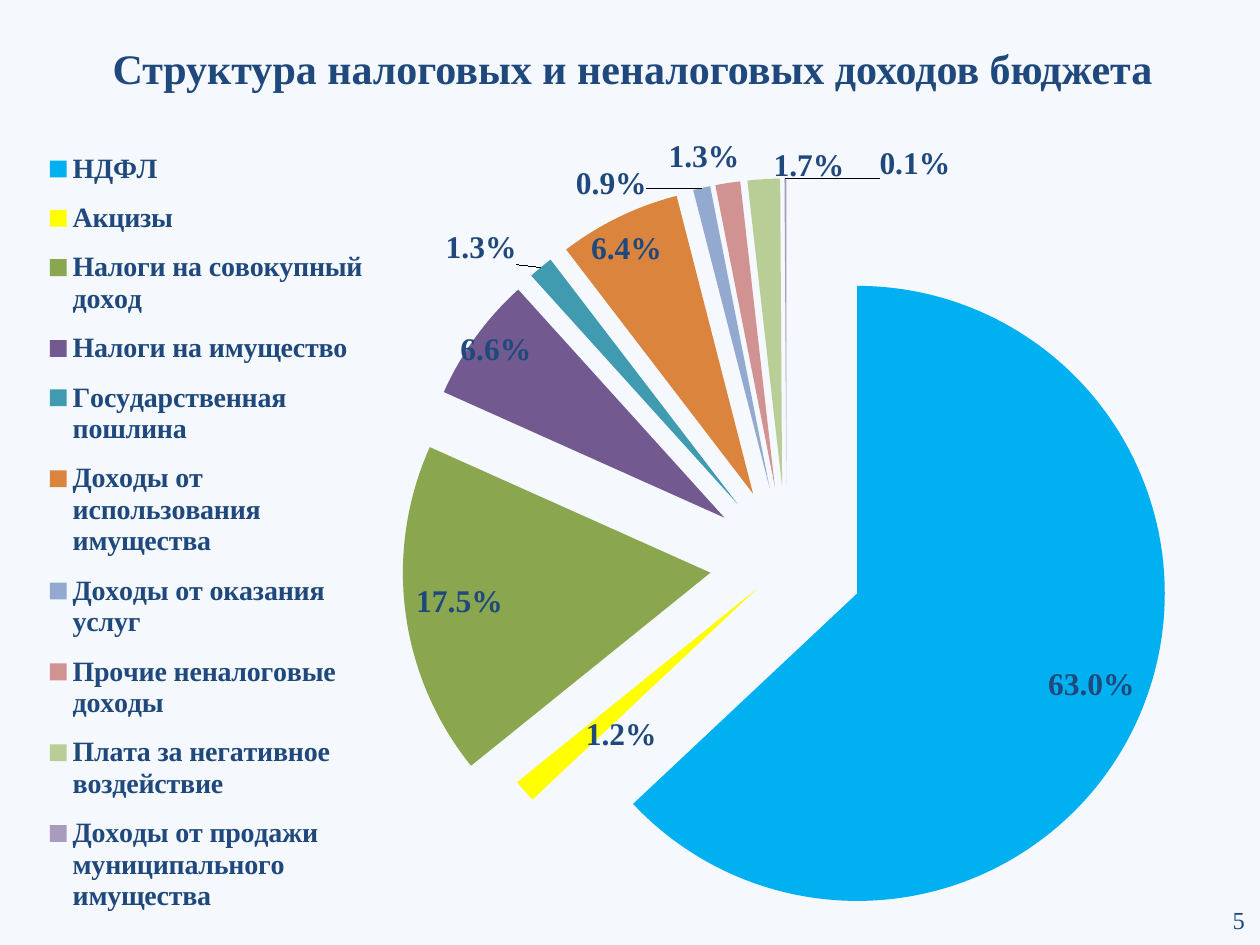
"""Build a slide with an exploded pie chart of budget revenue."""
from math import cos, pi, sin
from typing import NamedTuple, Optional

from lxml import etree
from pptx import Presentation
from pptx.chart.data import CategoryChartData
from pptx.dml.color import RGBColor
from pptx.enum.chart import XL_CHART_TYPE, XL_LABEL_POSITION, XL_LEGEND_POSITION
from pptx.enum.text import MSO_ANCHOR, MSO_AUTO_SIZE, PP_ALIGN
from pptx.oxml.ns import qn
from pptx.util import Inches, Pt

PIE = XL_CHART_TYPE.PIE
BEST_FIT, LABEL_CENTER = XL_LABEL_POSITION.BEST_FIT, XL_LABEL_POSITION.CENTER
LEGEND_RIGHT = XL_LEGEND_POSITION.RIGHT
MIDDLE, NO_FIT = MSO_ANCHOR.MIDDLE, MSO_AUTO_SIZE.NONE
CENTER, RIGHT = PP_ALIGN.CENTER, PP_ALIGN.RIGHT

NAVY = RGBColor(0x1F, 0x49, 0x7D)
PALE = RGBColor(0xF5, 0xF8, 0xFC)
SKY = RGBColor(0x00, 0xB0, 0xF0)
YELLOW = RGBColor(0xFF, 0xFF, 0x00)
GREEN = RGBColor(0x8A, 0xA6, 0x4F)
PURPLE = RGBColor(0x72, 0x5A, 0x91)
TEAL = RGBColor(0x41, 0x9B, 0xB0)
ORANGE = RGBColor(0xDB, 0x84, 0x3D)
STEEL = RGBColor(0x93, 0xA9, 0xCF)
ROSE = RGBColor(0xD1, 0x93, 0x92)
SAGE = RGBColor(0xB9, 0xCD, 0x96)
LILAC = RGBColor(0xA9, 0x9B, 0xBD)

FONT = "Times New Roman"
PERCENT = "0.0%"
CHART_X, CHART_Y, CHART_W, CHART_H = 0.28, 1.01, 9.69, 6.44
PIE_X, PIE_Y, RADIUS = 6.24, 4.47, 1.95


class Slice(NamedTuple):
    name: str
    value: float
    color: RGBColor
    label: Optional[tuple[float, float]] = None
    explosion: int = 25


SLICES = [
    Slice("НДФЛ", 0.63, SKY),
    Slice("Акцизы", 0.012, YELLOW, (5.16, 5.63), 13),
    Slice("Налоги на совокупный доход", 0.175, GREEN),
    Slice("Налоги на имущество", 0.066, PURPLE, (4.23, 3.0)),
    Slice("Государственная пошлина", 0.013, TEAL, (4.05, 2.25)),
    Slice("Доходы от использования имущества", 0.064, ORANGE, (5.13, 2.31)),
    Slice("Доходы от оказания услуг", 0.009, STEEL, (4.93, 1.82)),
    Slice("Прочие неналоговые доходы", 0.013, ROSE, (5.64, 1.61)),
    Slice("Плата за негативное воздействие", 0.017, SAGE, (6.44, 1.69)),
    Slice("Доходы от продажи муниципального имущества", 0.001, LILAC, (7.26, 1.67)),
]


def style_font(font, size: float, bold: bool) -> None:
    """Apply the slide's typeface and colour."""
    font.name, font.size, font.bold = FONT, Pt(size), bold
    font.color.rgb = NAVY


def write_text(sp, text: str, *, size: float, bold: bool = False, align=CENTER) -> None:
    """Write one formatted paragraph into a shape."""
    tf = sp.text_frame
    tf.word_wrap, tf.auto_size, tf.vertical_anchor = True, NO_FIT, MIDDLE
    p = tf.paragraphs[0]
    p.alignment = align
    r = p.add_run()
    r.text = text
    style_font(r.font, size, bold)


def make_layout(**values) -> etree.Element:
    """Return a manual chart layout element."""
    layout = etree.Element(qn("c:layout"))
    manual = etree.SubElement(layout, qn("c:manualLayout"))
    for tag, value in values.items():
        etree.SubElement(manual, qn(f"c:{tag}"), val=str(value))
    return layout


def format_slice(ser, idx: int, item: Slice, start: float) -> None:
    """Colour and explode one slice and place its label."""
    point = ser.points[idx]
    fill = point.format.fill
    fill.solid()
    fill.fore_color.rgb = item.color
    dpt = ser._element.xpath(f"c:dPt[c:idx/@val='{idx}']")[0]
    dpt.insert(1, etree.Element(qn("c:explosion"), val=str(item.explosion)))
    if item.label is None:
        return
    label = point.data_label
    style_font(label.font, 18, True)
    label.position = LABEL_CENTER
    angle = 2 * pi * (start + item.value / 2)
    reach = RADIUS * (0.5 + item.explosion / 100)
    dx = item.label[0] - PIE_X - reach * sin(angle)
    dy = item.label[1] - PIE_Y + reach * cos(angle)
    dlbl = ser._element.xpath(f"c:dLbls/c:dLbl[c:idx/@val='{idx}']")[0]
    dlbl.insert(1, make_layout(x=round(dx / CHART_W, 4), y=round(dy / CHART_H, 4)))
    dlbl.insert(2, etree.Element(qn("c:numFmt"), formatCode=PERCENT, sourceLinked="0"))


def add_pie(s) -> None:
    """Add the revenue pie with its legend."""
    data = CategoryChartData(number_format=PERCENT)
    data.categories = [item.name for item in SLICES]
    data.add_series("Series 1", [item.value for item in SLICES])
    box = [Inches(v) for v in (CHART_X, CHART_Y, CHART_W, CHART_H)]
    chart = s.shapes.add_chart(PIE, *box, data).chart
    chart.has_title = False
    style_font(chart.font, 18, False)

    chart.has_legend = True
    legend = chart.legend
    legend.position, legend.include_in_layout = LEGEND_RIGHT, False
    style_font(legend.font, 16, True)
    legend._element.find(qn("c:legendPos")).addnext(
        make_layout(xMode="edge", yMode="edge", x=0, y=0.01, w=0.28, h=0.98))

    area = chart._chartSpace.chart.plotArea
    for old in area.findall(qn("c:layout")):
        area.remove(old)
    area.insert(0, make_layout(layoutTarget="inner", xMode="edge", yMode="edge",
                               x=0.231, y=0.158, w=0.769, h=0.758))

    plot = chart.plots[0]
    plot.vary_by_categories = True
    ser = plot.series[0]
    labels = ser.data_labels
    labels.show_value, labels.position = True, BEST_FIT
    labels.number_format, labels.number_format_is_linked = PERCENT, False
    style_font(labels.font, 18, True)
    start = 0.0
    for idx, item in enumerate(SLICES):
        format_slice(ser, idx, item, start)
        start += item.value


def main() -> None:
    """Build and save the slide."""
    prs = Presentation()
    prs.slide_width, prs.slide_height = Inches(10), Inches(7.5)
    s = prs.slides.add_slide(prs.slide_layouts[5])
    s.background.fill.solid()
    s.background.fill.fore_color.rgb = PALE

    title = s.shapes.title
    title.left, title.top = Inches(0.04), Inches(0.29)
    title.width, title.height = Inches(9.96), Inches(0.5)
    write_text(title, "Структура налоговых и неналоговых доходов бюджета",
               size=24, bold=True)
    add_pie(s)
    number = s.shapes.add_textbox(Inches(9.55), Inches(7.1), Inches(0.43), Inches(0.4))
    write_text(number, "5", size=14, align=RIGHT)
    prs.save("out.pptx")


if __name__ == "__main__":
    main()
